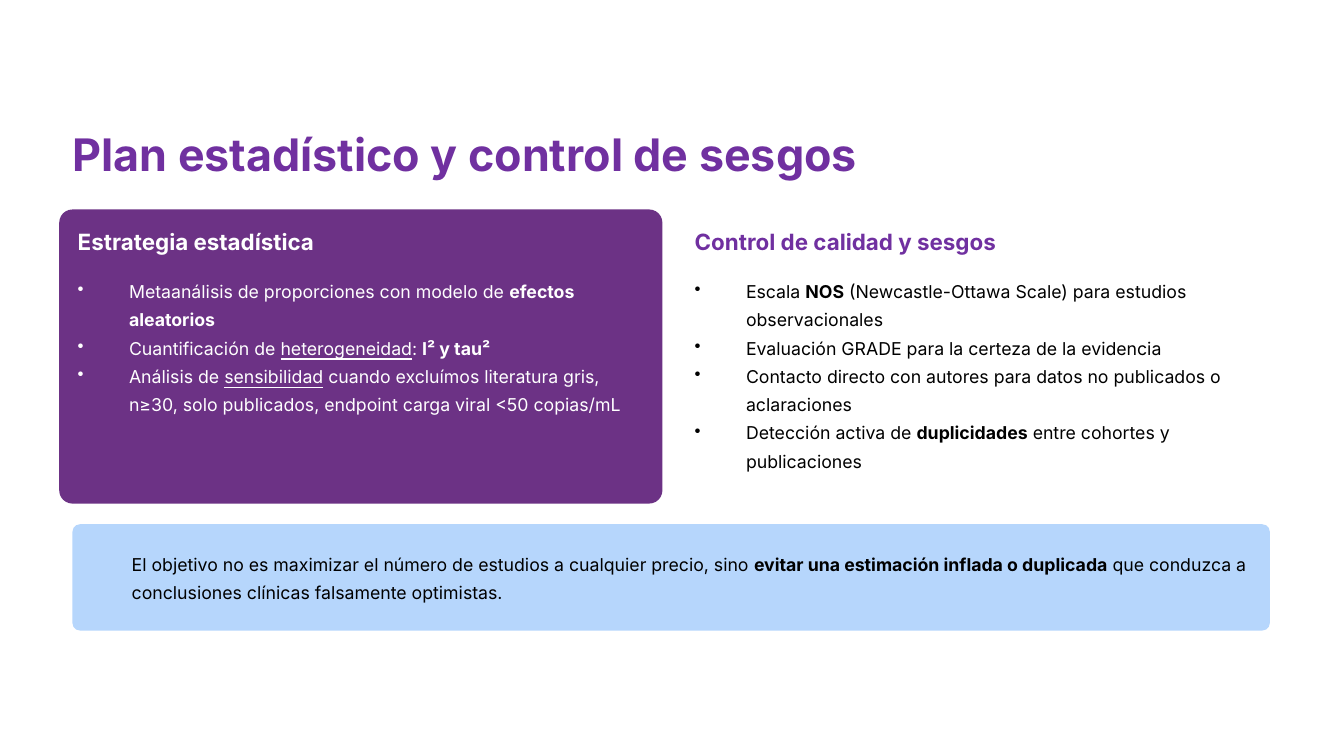
from collections import namedtuple

from lxml.etree import SubElement
from pptx import Presentation
from pptx.dml.color import RGBColor
from pptx.enum.shapes import MSO_SHAPE
from pptx.oxml.ns import qn
from pptx.util import Cm, Pt

PURPLE = RGBColor(0x70, 0x30, 0xA0)
PANEL_PURPLE = RGBColor(0x6C, 0x32, 0x85)
LIGHT_BLUE = RGBColor(0xB6, 0xD6, 0xFC)
WHITE = RGBColor(0xFF, 0xFF, 0xFF)
BLACK = RGBColor(0x00, 0x00, 0x00)

FONT = "Inter"
BODY_SIZE = 9.5
HEADING_SPACING = 1.04
BODY_SPACING = 1.33
LINE_HEIGHT = 0.6
BULLET_INDENT = Cm(0.97)

Box = namedtuple("Box", "left top width height")
Span = namedtuple("Span", "text bold underline", defaults=(False, False))

STRATEGY = [
    [Span("Metaanálisis de proporciones con modelo de "), Span("efectos aleatorios", bold=True)],
    [Span("Cuantificación de "), Span("heterogeneidad", underline=True), Span(": "),
     Span("I² y tau²", bold=True)],
    [Span("Análisis de "), Span("sensibilidad", underline=True),
     Span(" cuando excluímos literatura gris, n≥30, solo publicados, "
          "endpoint carga viral <50 copias/mL")],
]
QUALITY = [
    [Span("Escala "), Span("NOS", bold=True),
     Span(" (Newcastle-Ottawa Scale) para estudios observacionales")],
    [Span("Evaluación GRADE para la certeza de la evidencia")],
    [Span("Contacto directo con autores para datos no publicados o aclaraciones")],
    [Span("Detección activa de "), Span("duplicidades", bold=True),
     Span(" entre cohortes y publicaciones")],
]
OBJECTIVE = [
    Span("El objetivo no es maximizar el número de estudios a cualquier precio, sino "),
    Span("evitar una estimación inflada o duplicada", bold=True),
    Span(" que conduzca a conclusiones clínicas falsamente optimistas."),
]


def add_card(page, box, color, corner):
    card = page.shapes.add_shape(MSO_SHAPE.ROUNDED_RECTANGLE, *map(Cm, box))
    card.adjustments[0] = corner
    card.shadow.inherit = False
    card.fill.solid()
    card.fill.fore_color.rgb = color
    card.line.fill.background()


def add_bullet(para):
    properties = para._p.get_or_add_pPr()
    properties.set("marL", str(BULLET_INDENT))
    properties.set("indent", str(-BULLET_INDENT))
    SubElement(properties, qn("a:buChar"), char="•")


def add_text(page, box, paragraphs, size, color, spacing, wrap=True, bullets=False):
    frame = page.shapes.add_textbox(*map(Cm, box)).text_frame
    frame.margin_left = frame.margin_top = frame.margin_right = frame.margin_bottom = 0
    frame.word_wrap = wrap
    for index, spans in enumerate(paragraphs):
        para = frame.add_paragraph() if index else frame.paragraphs[0]
        if bullets:
            add_bullet(para)
        para.line_spacing = spacing
        for span in spans:
            run = para.add_run()
            run.text = span.text
            run.font.name = FONT
            run.font.size = Pt(size)
            run.font.color.rgb = color
            run.font.bold = span.bold
            run.font.underline = span.underline


def add_heading(page, box, text, size, color):
    add_text(page, box, [[Span(text, bold=True)]], size, color, HEADING_SPACING, wrap=False)


def add_column(page, box, heading, heading_width, items, lines, heading_color, color, fill=None):
    if fill is not None:
        add_card(page, box, fill, 0.045)
    left = box.left + 0.35
    add_heading(page, Box(left, box.top + 0.33, heading_width, 0.53), heading, 12, heading_color)
    list_box = Box(left, box.top + 1.22, box.width - 0.68, lines * LINE_HEIGHT)
    add_text(page, list_box, items, BODY_SIZE, color, BODY_SPACING, bullets=True)


def add_objective(page, box):
    add_card(page, box, LIGHT_BLUE, 0.072)
    text_box = Box(box.left + 1.12, box.top + 0.43, box.width - 1.45, 1.09)
    add_text(page, text_box, [OBJECTIVE], BODY_SIZE, BLACK, BODY_SPACING)


def main():
    deck = Presentation()
    deck.slide_width = Cm(25.4)
    deck.slide_height = Cm(14.29)
    page = deck.slides.add_slide(deck.slide_layouts[6])
    page.background.fill.solid()
    page.background.fill.fore_color.rgb = WHITE

    add_heading(page, Box(1.37, 2.36, 16.36, 1.07),
                "Plan estadístico y control de sesgos", 24, PURPLE)
    add_column(page, Box(1.12, 3.96, 11.4, 5.56), "Estrategia estadística", 5.82,
               STRATEGY, 5, WHITE, WHITE, PANEL_PURPLE)
    add_column(page, Box(12.78, 3.96, 11.58, 5.56), "Control de calidad y sesgos", 7.06,
               QUALITY, 7, PURPLE, BLACK)
    add_objective(page, Box(1.37, 9.91, 22.63, 2.01))
    deck.save("out.pptx")


if __name__ == "__main__":
    main()
